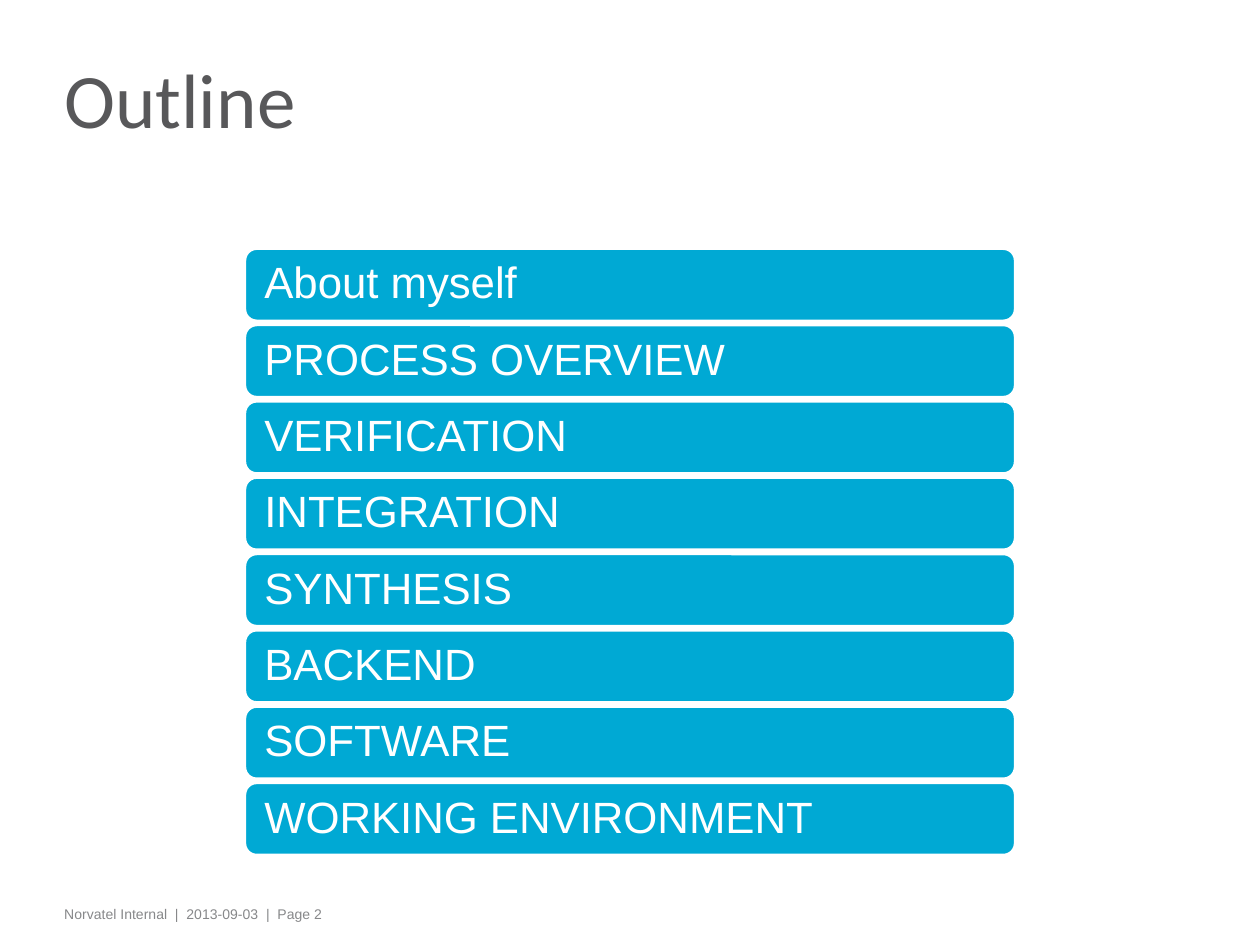
from dataclasses import dataclass

from pptx import Presentation
from pptx.dml.color import RGBColor
from pptx.enum.shapes import MSO_SHAPE
from pptx.enum.text import MSO_ANCHOR, PP_ALIGN
from pptx.util import Inches, Pt

ROUNDED = MSO_SHAPE.ROUNDED_RECTANGLE
TOP, MIDDLE = MSO_ANCHOR.TOP, MSO_ANCHOR.MIDDLE
LEFT = PP_ALIGN.LEFT


@dataclass(frozen=True)
class Theme:
    white: RGBColor = RGBColor(0xFF, 0xFF, 0xFF)
    blue: RGBColor = RGBColor(0x00, 0xA9, 0xD4)
    title_gray: RGBColor = RGBColor(0x58, 0x58, 0x5A)
    footer_gray: RGBColor = RGBColor(0x87, 0x88, 0x8A)
    title_font: str = "Calibri"
    body_font: str = "Arial"
    title_size: int = 44
    topic_size: int = 25
    footer_size: int = 8


THEME = Theme()


def set_text(shape, text, font, size, color, anchor, inset_x, inset_y, line_spacing=1.0):
    text_frame = shape.text_frame
    text_frame.text = text
    text_frame.word_wrap = True
    text_frame.vertical_anchor = anchor
    text_frame.margin_left = text_frame.margin_right = Inches(inset_x)
    text_frame.margin_top = text_frame.margin_bottom = Inches(inset_y)
    paragraph = text_frame.paragraphs[0]
    paragraph.alignment = LEFT
    paragraph.line_spacing = line_spacing
    run = paragraph.runs[0]
    run.font.name = font
    run.font.size = Pt(size)
    run.font.color.rgb = color


presentation = Presentation()
presentation.slide_width = Inches(10)
presentation.slide_height = Inches(7.5)
slide = presentation.slides.add_slide(presentation.slide_layouts[6])

# Footer
footer = slide.shapes.add_textbox(Inches(0.43), Inches(7.14), Inches(8.09), Inches(0.24))
set_text(footer, "Norvatel Internal  |  2013-09-03  |  Page 2", THEME.body_font,
         THEME.footer_size, THEME.footer_gray, TOP, 0.08, 0.05)

# Title
title = slide.shapes.add_textbox(Inches(0.43), Inches(0.26), Inches(8.2), Inches(1.19))
set_text(title, "Outline", THEME.title_font, THEME.title_size, THEME.title_gray,
         MIDDLE, 0.08, 0, line_spacing=0.75)

# Topic bars, evenly spaced between the first and the last
topics = ["About myself", "PROCESS OVERVIEW", "VERIFICATION", "INTEGRATION",
          "SYNTHESIS", "BACKEND", "SOFTWARE", "WORKING ENVIRONMENT"]
first_top, last_top = 1.97, 6.21
pitch = (last_top - first_top) / (len(topics) - 1)

for index, topic in enumerate(topics):
    bar = slide.shapes.add_shape(ROUNDED, Inches(1.94), Inches(first_top + index * pitch),
                                 Inches(6.12), Inches(0.58))
    bar.shadow.inherit = False
    bar.fill.solid()
    bar.fill.fore_color.rgb = THEME.blue
    bar.line.color.rgb = THEME.white
    bar.line.width = Pt(2)
    set_text(bar, topic, THEME.body_font, THEME.topic_size, THEME.white,
             MIDDLE, 0.13, 0.08, line_spacing=0.9)

presentation.save("out.pptx")
